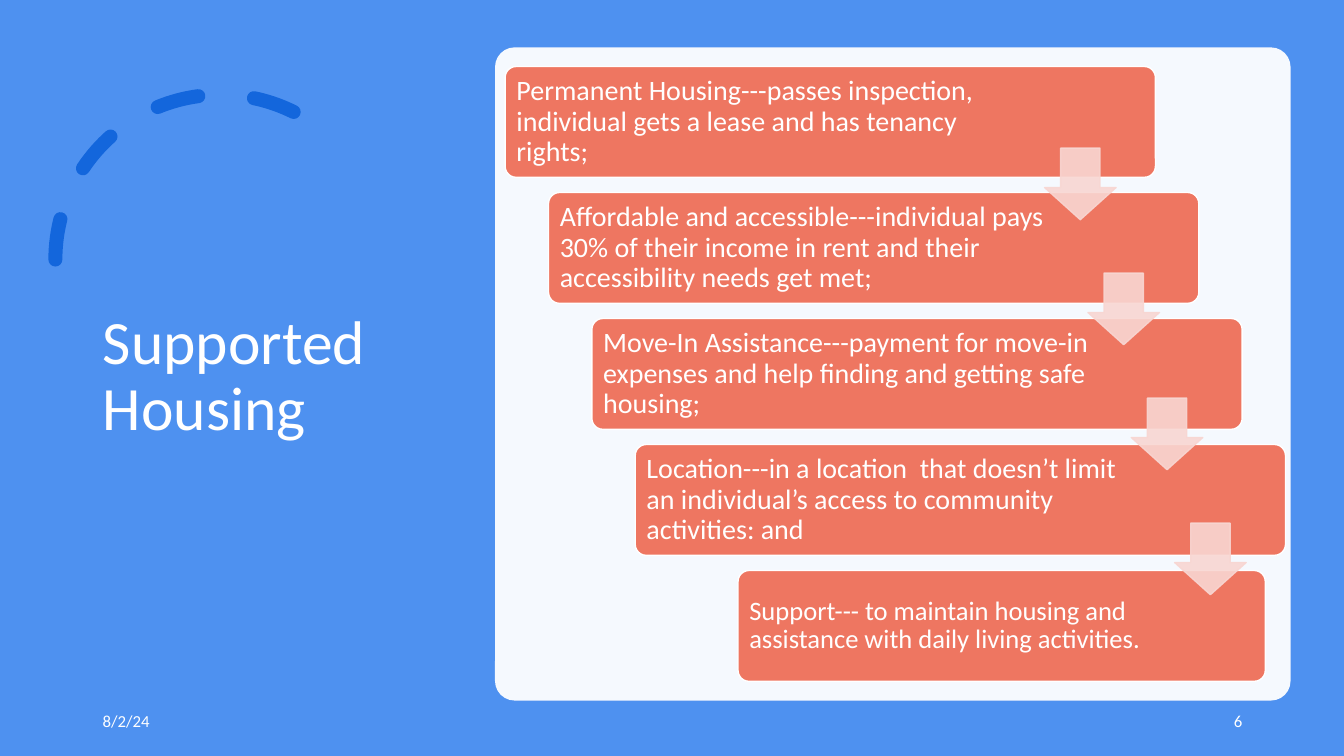
"""Build the Supported Housing slide with its staircase of five steps."""
from dataclasses import dataclass
from lxml.etree import SubElement
from pptx import Presentation
from pptx.dml.color import RGBColor
from pptx.enum.dml import MSO_LINE
from pptx.enum.shapes import MSO_SHAPE
from pptx.enum.text import MSO_ANCHOR, MSO_AUTO_SIZE, PP_ALIGN
from pptx.oxml.ns import qn
from pptx.util import Inches, Pt

TITLE = "Supported Housing"
DATE, PAGE = "8/2/24", "6"
STEPS = [
    "Permanent Housing---passes inspection, individual gets a lease and has tenancy rights;",
    "Affordable and accessible---individual pays 30% of their income in rent and their accessibility needs get met;",
    "Move-In Assistance---payment for move-in expenses and help finding and getting safe housing;",
    "Location---in a location  that doesn’t limit an individual’s access to community activities: and",
    "Support--- to maintain housing and assistance with daily living activities.",
]
WIDTHS = [4.97, 5.1, 5.1, 5.1, 4.11]


@dataclass(frozen=True)
class Theme:
    """Hold the colours, font and type sizes."""
    back: str = "4E91F0"
    arc: str = "1366DC"
    white: str = "FFFFFF"
    step: str = "EE7661"
    arrow: str = "F8D6D2"
    font: str = "Calibri"
    title: int = 44
    body: int = 20
    last: int = 19
    small: int = 12


LOOK = Theme()
LEFT = 0.92
STEP_X, STEP_Y, STEP_W, STEP_H = 5.01, 0.66, 6.45, 1.1
LAST_X, LAST_W = 7.32, 5.23
SHIFT, DROP = 0.43, 1.25
ARROW_X, ARROW_Y, ARROW_DROP, ARROW = 10.36, 1.47, 1.24, 0.71
INSET, CURVE = 0.08, 0.03


def paint(fill, color, alpha=100):
    """Set a solid fill with an optional opacity in percent."""
    fill.solid()
    fill.fore_color.rgb = RGBColor.from_string(color)
    if alpha < 100:
        tone = fill._xPr.find(qn("a:solidFill"))[0]
        SubElement(tone, qn("a:alpha"), val=str(alpha * 1000))


def draw(slide, kind, box, adjust, color=None, line=None, alpha=100, width=1):
    """Add one preset shape and return it."""
    shape = slide.shapes.add_shape(kind, *map(Inches, box))
    shape.shadow.inherit = False
    for i, value in enumerate(adjust):
        shape.adjustments[i] = value
    if color:
        paint(shape.fill, color, alpha)
    else:
        shape.fill.background()
    if line:
        paint(shape.line.fill, line, alpha)
        shape.line.width = Pt(width)
    else:
        shape.line.fill.background()
    return shape


def write(shape, text, size, align=PP_ALIGN.LEFT, space=None, pad=None):
    """Put formatted text into a shape."""
    frame = shape.text_frame
    frame.text = text
    frame.word_wrap = True
    frame.auto_size = MSO_AUTO_SIZE.NONE
    frame.vertical_anchor = MSO_ANCHOR.MIDDLE
    if pad:
        left, right = map(Inches, pad)
        frame.margin_left = frame.margin_top = frame.margin_bottom = left
        frame.margin_right = right
    para = frame.paragraphs[0]
    para.alignment = align
    if space:
        para.line_spacing = space
    font = para.runs[0].font
    font.name, font.size = LOOK.font, Pt(size)
    font.color.rgb = RGBColor.from_string(LOOK.white)


def place(shape, box):
    """Move and size a shape."""
    shape.left, shape.top, shape.width, shape.height = map(Inches, box)


def stairs(slide):
    """Draw the steps and the arrows between them."""
    end = len(STEPS) - 1
    for i, (text, span) in enumerate(zip(STEPS, WIDTHS)):
        last = i == end
        x = LAST_X if last else STEP_X + i * SHIFT
        wide = LAST_W if last else STEP_W
        step = draw(slide, MSO_SHAPE.ROUNDED_RECTANGLE,
                    (x, STEP_Y + i * DROP, wide, STEP_H), [0.1], LOOK.step, LOOK.white)
        right = wide - 2 * CURVE - span + INSET
        write(step, text, LOOK.last if last else LOOK.body, space=0.9, pad=(INSET, right))
    for i in range(end):
        box = (ARROW_X + i * SHIFT, ARROW_Y + i * ARROW_DROP, ARROW, ARROW)
        draw(slide, MSO_SHAPE.DOWN_ARROW, box, [0.55, 0.45], LOOK.arrow, LOOK.arrow, 90)


def main():
    """Build and save the deck."""
    deck = Presentation()
    deck.slide_width, deck.slide_height = Inches(13.33), Inches(7.5)
    slide = deck.slides.add_slide(deck.slide_layouts[5])
    paint(slide.background.fill, LOOK.back)

    arc = draw(slide, MSO_SHAPE.ARC, (0.55, 0.94, 3.27, 3.27), [146.13, 0],
               line=LOOK.arc, width=10)
    arc.line.dash_style = MSO_LINE.DASH
    arc.line._ln.set("cap", "rnd")
    arc._element.spPr.xfrm.set("flipH", "1")

    title = slide.shapes.title
    place(title, (LEFT, 0.7, 3.23, 6.09))
    write(title, TITLE, LOOK.title, space=0.9)
    draw(slide, MSO_SHAPE.ROUNDED_RECTANGLE, (4.91, 0.47, 7.89, 6.48), [0.03],
         LOOK.white, alpha=95)
    for text, x, align in ((DATE, LEFT, PP_ALIGN.LEFT), (PAGE, 9.42, PP_ALIGN.RIGHT)):
        note = slide.shapes.add_textbox(*map(Inches, (x, 6.95, 3, 0.4)))
        write(note, text, LOOK.small, align)
    stairs(slide)
    deck.save("out.pptx")


if __name__ == "__main__":
    main()
